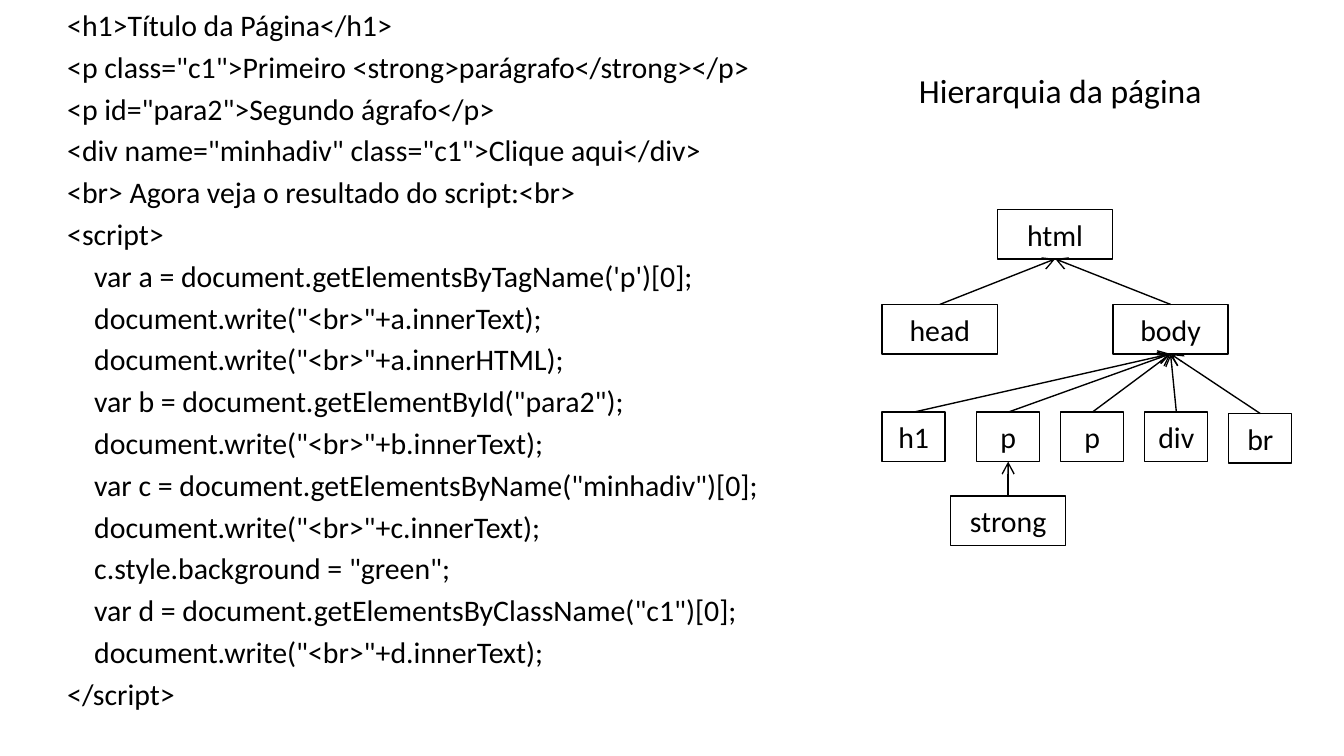
from lxml.etree import SubElement
from pptx import Presentation
from pptx.dml.color import RGBColor
from pptx.enum.shapes import MSO_CONNECTOR, MSO_SHAPE
from pptx.enum.text import MSO_ANCHOR, MSO_AUTO_SIZE, PP_ALIGN
from pptx.oxml.ns import qn
from pptx.util import Pt

COLORS = {"ink": "000000", "back": "FFFFFF"}
INK = RGBColor.from_string(COLORS["ink"])
FRAME = {"auto_size": MSO_AUTO_SIZE.NONE, "word_wrap": False,
         "vertical_anchor": MSO_ANCHOR.MIDDLE}


def format_all(item, values):
    for name, value in values.items():
        setattr(item, name, value)


def write(para, text, size, align):
    para.text = text
    para.alignment = align
    format_all(para.runs[0].font, {"name": "Calibri", "size": Pt(size)})
    para.runs[0].font.color.rgb = INK


deck = Presentation()
format_all(deck, {"slide_width": Pt(720), "slide_height": Pt(405)})
slide = deck.slides.add_slide(deck.slide_layouts[5])
slide.background.fill.solid()
slide.background.fill.fore_color.rgb = RGBColor.from_string(COLORS["back"])
shapes = slide.shapes

# Title
title = shapes.title
format_all(title, {"left": Pt(472.3), "top": Pt(33.8),
                   "width": Pt(191.5), "height": Pt(28.8)})
format_all(title.text_frame, FRAME)
write(title.text_frame.paragraphs[0], "Hierarquia da página", 18, PP_ALIGN.CENTER)

# Code listing: indent level and text
CODE = [
    (0, '<h1>Título da Página</h1>'),
    (0, '<p class="c1">Primeiro <strong>parágrafo</strong></p>'),
    (0, '<p id="para2">Segundo ágrafo</p>'),
    (0, '<div name="minhadiv" class="c1">Clique aqui</div>'),
    (0, '<br> Agora veja o resultado do script:<br>'),
    (0, '<script>'),
    (1, "var a = document.getElementsByTagName('p')[0];"),
    (1, 'document.write("<br>"+a.innerText);'),
    (1, 'document.write("<br>"+a.innerHTML);'),
    (1, 'var b = document.getElementById("para2");'),
    (1, 'document.write("<br>"+b.innerText);'),
    (1, 'var c = document.getElementsByName("minhadiv")[0];'),
    (1, 'document.write("<br>"+c.innerText);'),
    (1, 'c.style.background = "green";'),
    (1, 'var d = document.getElementsByClassName("c1")[0];'),
    (1, 'document.write("<br>"+d.innerText);'),
    (0, '</script>'),
]
code = shapes.add_textbox(Pt(0), Pt(0), Pt(495.4), Pt(405)).text_frame
format_all(code, {"word_wrap": True, "margin_top": Pt(3.6)})
for i, (level, text) in enumerate(CODE):
    para = code.paragraphs[0] if i == 0 else code.add_paragraph()
    write(para, text, 16, PP_ALIGN.LEFT)
    para.space_before = Pt(3.2)
    props = para._p.get_or_add_pPr()
    props.set("marL", str(Pt(28.9 + 14.5 * level)))
    props.set("indent", "0")

# Tree: label, left, top, width, index of parent
WIDE, SLIM, HIGH = 61.8, 33.8, 26.5
NODES = [
    ("html", 534.4, 112.2, WIDE, None),
    ("head", 472.6, 163.1, WIDE, 0),
    ("body", 596.2, 163.1, WIDE, 0),
    ("h1", 472.6, 220.8, SLIM, 2),
    ("p", 523.2, 220.8, SLIM, 2),
    ("p", 568.3, 220.8, SLIM, 2),
    ("div", 613.3, 220.8, SLIM, 2),
    ("br", 658.3, 221.6, SLIM, 2),
    ("strong", 509.2, 265.8, WIDE, 4),
]
boxes = []
for label, left, top, width, parent in NODES:
    box = shapes.add_shape(MSO_SHAPE.RECTANGLE, Pt(left), Pt(top), Pt(width), Pt(HIGH))
    box.shadow.inherit = False
    box.fill.background()
    box.line.color.rgb = INK
    box.line.width = Pt(0.75)
    format_all(box.text_frame, FRAME)
    write(box.text_frame.paragraphs[0], label, 16, PP_ALIGN.CENTER)
    boxes.append(box)

# Arrows from child to parent
for box, node in zip(boxes, NODES):
    if node[4] is None:
        continue
    arrow = shapes.add_connector(MSO_CONNECTOR.STRAIGHT, 0, 0, 0, 0)
    arrow.begin_connect(box, 0)
    arrow.end_connect(boxes[node[4]], 2)
    arrow.line.color.rgb = INK
    arrow.line.width = Pt(0.75)
    SubElement(arrow.line._get_or_add_ln(), qn("a:tailEnd"), type="arrow")
    SubElement(arrow._element.spPr, qn("a:effectLst"))

deck.save("out.pptx")
